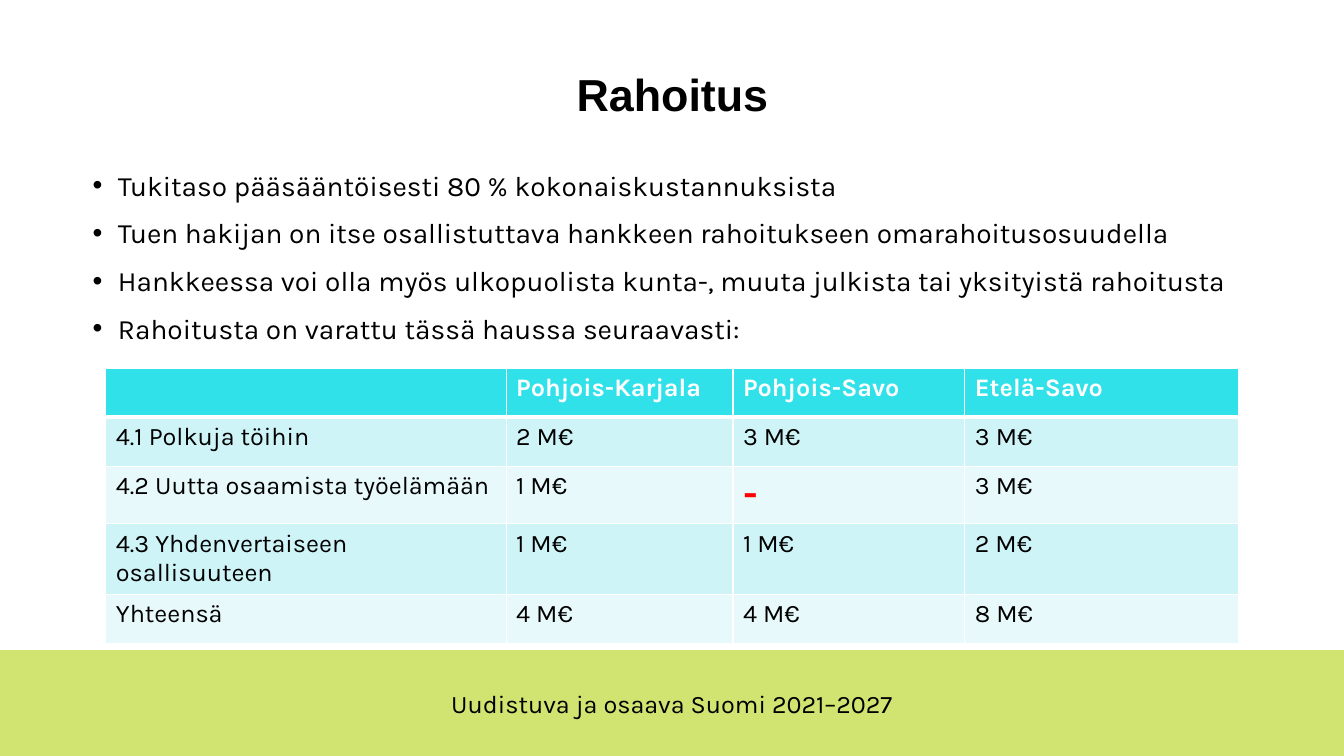
from dataclasses import dataclass

from lxml.etree import SubElement
from pptx import Presentation
from pptx.dml.color import RGBColor as Rgb
from pptx.enum.shapes import MSO_SHAPE as Preset
from pptx.enum.text import MSO_ANCHOR as Anchor, PP_ALIGN as Align
from pptx.oxml.ns import qn
from pptx.util import Emu, Pt

EMU_PER_PX = 9144  # 100 px to the inch


@dataclass(frozen=True)
class Theme:
    heading_font: str = "Arial"
    body_font: str = "Karla"
    title_size: int = 32
    body_size: int = 20
    small_size: int = 18
    dash_size: int = 28
    black: str = "000000"
    white: str = "FFFFFF"
    red: str = "FF0000"
    lime: str = "D1E371"
    header: str = "31E1E9"
    bands: tuple[str, str] = ("CEF4F7", "E8F9FB")


@dataclass(frozen=True)
class Box:
    left: int
    top: int
    width: int
    height: int

    def emu(self) -> tuple[Emu, ...]:
        return tuple(px(n) for n in (self.left, self.top, self.width, self.height))


@dataclass(frozen=True)
class Style:
    size: int
    color: str
    font: str
    bold: bool = False


THEME = Theme()
TITLE = Style(THEME.title_size, THEME.black, THEME.heading_font, True)
BODY = Style(THEME.body_size, THEME.black, THEME.body_font)
SMALL = Style(THEME.small_size, THEME.black, THEME.body_font)
HEADER = Style(THEME.small_size, THEME.white, THEME.body_font, True)
DASH = Style(THEME.dash_size, THEME.red, THEME.body_font, True)

FUNDING_POINTS = (
    "Tukitaso pääsääntöisesti 80 % kokonaiskustannuksista",
    "Tuen hakijan on itse osallistuttava hankkeen rahoitukseen omarahoitusosuudella",
    "Hankkeessa voi olla myös ulkopuolista kunta-, muuta julkista tai yksityistä rahoitusta",
    "Rahoitusta on varattu tässä haussa seuraavasti:",
)
FUNDING_ROWS = (
    ("", "Pohjois-Karjala", "Pohjois-Savo", "Etelä-Savo"),
    ("4.1 Polkuja töihin", "2 M€", "3 M€", "3 M€"),
    ("4.2 Uutta osaamista työelämään", "1 M€", "-", "3 M€"),
    ("4.3 Yhdenvertaiseen osallisuuteen", "1 M€", "1 M€", "2 M€"),
    ("Yhteensä", "4 M€", "4 M€", "8 M€"),
)
COLUMN_WIDTHS = (397, 225, 230, 272)
ROW_HEIGHT = 49


def px(length: int) -> Emu:
    return Emu(length * EMU_PER_PX)


def apply_style(paragraph, style: Style) -> None:
    font = paragraph.font
    font.name, font.size, font.bold = style.font, Pt(style.size), style.bold
    font.color.rgb = Rgb.from_string(style.color)


def add_text(slide, box: Box, lines: tuple[str, ...], style: Style,
             anchor: Anchor = Anchor.MIDDLE, align: Align = Align.CENTER) -> list:
    frame = slide.shapes.add_textbox(*box.emu()).text_frame
    frame.word_wrap = True
    frame.vertical_anchor = anchor
    frame.margin_left = frame.margin_right = frame.margin_top = frame.margin_bottom = 0
    frame.text = "\n".join(lines)
    for paragraph in frame.paragraphs:
        paragraph.alignment = align
    if style is not BODY:
        for paragraph in frame.paragraphs:
            apply_style(paragraph, style)
    return list(frame.paragraphs)


def add_bullets(slide, box: Box, points: tuple[str, ...]) -> None:
    paragraphs = add_text(slide, box, points, BODY, Anchor.TOP, Align.LEFT)
    for index, paragraph in enumerate(paragraphs):
        if index:
            paragraph.space_before = Pt(10)
        properties = paragraph._p.get_or_add_pPr()
        properties.set("marL", str(px(25)))
        properties.set("indent", str(px(-25)))
        SubElement(properties, qn("a:buFont"), typeface=THEME.heading_font)
        SubElement(properties, qn("a:buChar"), char="•")
        apply_style(paragraph, BODY)


def add_borders(cell, top: int, bottom: int) -> None:
    properties = cell._tc.get_or_add_tcPr()
    for side, points in (("L", 1), ("R", 1), ("T", top), ("B", bottom)):
        line = SubElement(properties, qn(f"a:ln{side}"), w=str(Pt(points)))
        fill = SubElement(line, qn("a:solidFill"))
        SubElement(fill, qn("a:srgbClr"), val=THEME.white)


def add_funding_table(slide, left: int, top: int) -> None:
    box = Box(left, top, sum(COLUMN_WIDTHS), ROW_HEIGHT * len(FUNDING_ROWS))
    table = slide.shapes.add_table(len(FUNDING_ROWS), len(COLUMN_WIDTHS), *box.emu()).table
    table.horz_banding = False
    for column, width in zip(table.columns, COLUMN_WIDTHS):
        column.width = px(width)
    for row, amounts in enumerate(FUNDING_ROWS):
        table.rows[row].height = px(ROW_HEIGHT)
        for column, amount in enumerate(amounts):
            cell = table.cell(row, column)
            add_borders(cell, top=3 if row == 1 else 1, bottom=3 if row == 0 else 1)
            cell.fill.solid()
            band = THEME.bands[(row - 1) % 2] if row else THEME.header
            cell.fill.fore_color.rgb = Rgb.from_string(band)
            cell.text = amount
            style = HEADER if row == 0 else DASH if amount == "-" else SMALL
            apply_style(cell.text_frame.paragraphs[0], style)


def add_footer(slide) -> None:
    band = slide.shapes.add_shape(Preset.RECTANGLE, *Box(0, 645, 1333, 105).emu())
    band.shadow.inherit = False
    band.fill.solid()
    band.fill.fore_color.rgb = Rgb.from_string(THEME.lime)
    band.line.fill.background()
    add_text(slide, Box(325, 683, 683, 30), ("Uudistuva ja osaava Suomi 2021–2027",), SMALL)


def main() -> None:
    deck = Presentation()
    deck.slide_width, deck.slide_height = px(1333), px(750)
    slide = deck.slides.add_slide(deck.slide_layouts[6])

    # Footer band
    add_footer(slide)

    # Title and funding terms
    heading = add_text(slide, Box(92, 40, 1150, 113), ("Rahoitus",), TITLE)[0]
    heading.line_spacing = 0.9
    add_bullets(slide, Box(92, 167, 1150, 488), FUNDING_POINTS)

    # Funding by region
    add_funding_table(slide, 105, 365)

    deck.save("out.pptx")


if __name__ == "__main__":
    main()
